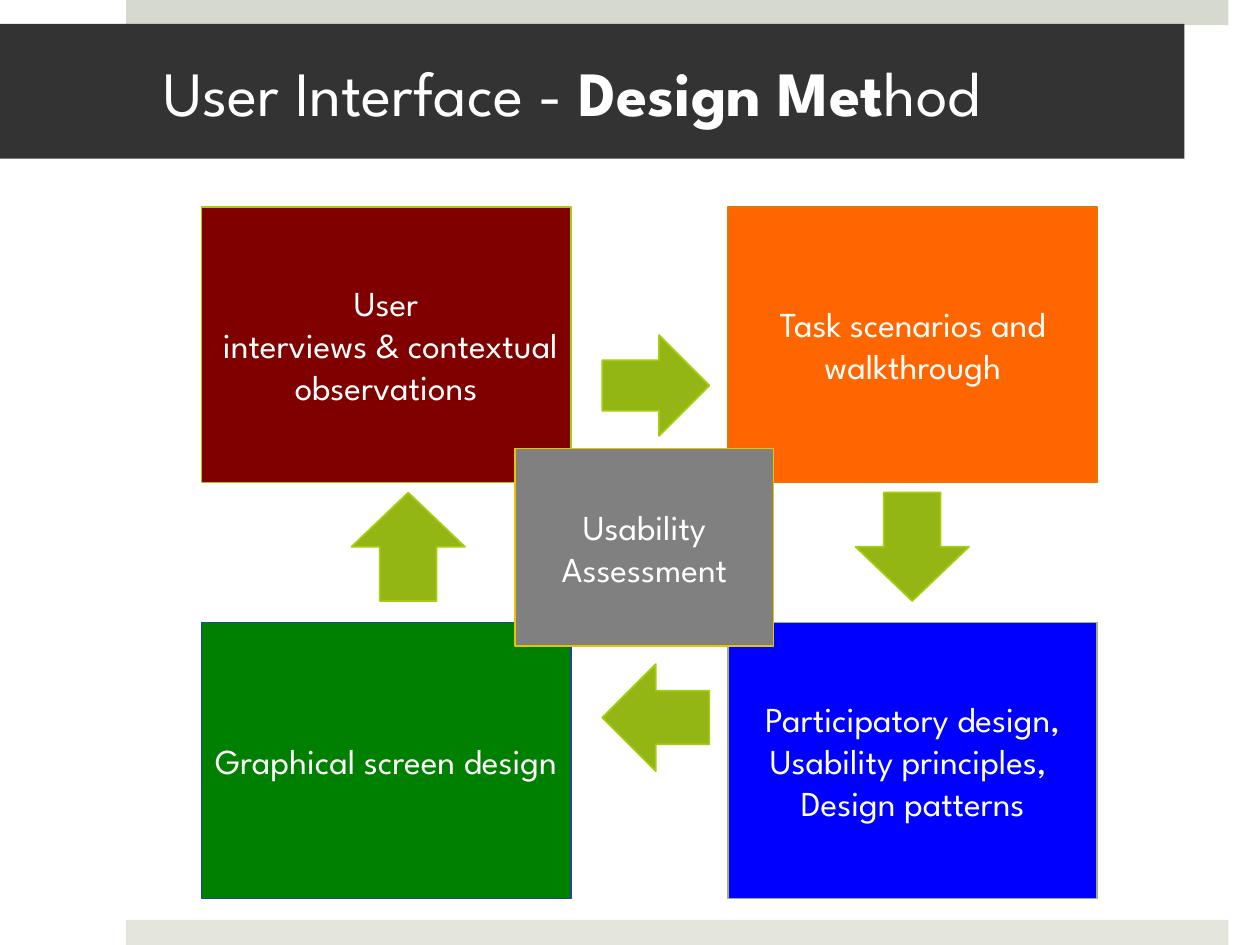
from dataclasses import dataclass

from pptx import Presentation
from pptx.dml.color import RGBColor
from pptx.enum.shapes import MSO_SHAPE
from pptx.enum.text import MSO_ANCHOR, MSO_AUTO_SIZE, PP_ALIGN
from pptx.util import Inches, Pt

FONT = "League Spartan"
WHITE = "FFFFFF"
ARROW_FILL, ARROW_LINE = "93B614", "A5CC12"
LEFT_COLUMN, RIGHT_COLUMN = 1.6, 5.78
TOP_ROW, BOTTOM_ROW = 1.64, 4.94
STEP_WIDTH, STEP_HEIGHT = 2.93, 2.19


@dataclass
class Box:
    left: float
    top: float
    fill: str
    line: str
    lines: tuple[str, ...]
    width: float = STEP_WIDTH
    height: float = STEP_HEIGHT


@dataclass
class Arrow:
    kind: MSO_SHAPE
    left: float
    top: float
    width: float
    height: float


BOXES_BEHIND = [
    Box(LEFT_COLUMN, TOP_ROW, "800000", "A5CC12",
        ("User", " interviews & contextual observations")),
    Box(RIGHT_COLUMN, TOP_ROW, "FF6600", "E27600", ("Task scenarios and walkthrough",)),
    Box(RIGHT_COLUMN, BOTTOM_ROW, "0000FF", "A3B36E",
        ("Participatory design, Usability principles, ", "Design patterns")),
]
ARROWS = [
    Arrow(MSO_SHAPE.RIGHT_ARROW, 4.78, 2.66, 0.85, 0.8),
    Arrow(MSO_SHAPE.DOWN_ARROW, 6.79, 3.91, 0.9, 0.86),
    Arrow(MSO_SHAPE.LEFT_ARROW, 4.78, 5.27, 0.85, 0.85),
    Arrow(MSO_SHAPE.UP_ARROW, 2.79, 3.91, 0.9, 0.86),
]
BOXES_IN_FRONT = [
    Box(LEFT_COLUMN, BOTTOM_ROW, "008000", "1E439E", ("Graphical screen design",)),
    Box(4.09, 3.56, "808080", "E6C500", ("Usability Assessment",), 2.05, 1.57),
]


def color(value: str) -> RGBColor:
    return RGBColor.from_string(value)


def paint(shape, fill: str) -> None:
    shape.fill.solid()
    shape.fill.fore_color.rgb = color(fill)


def add_run(paragraph, text: str, size: float, bold: bool = False) -> None:
    run = paragraph.add_run()
    run.text = text
    run.font.name = FONT
    run.font.size = Pt(size)
    run.font.bold = bold
    run.font.color.rgb = color(WHITE)


def add_shape(slide, kind: MSO_SHAPE, left: float, top: float, width: float,
              height: float, fill: str, line: str | None = None):
    """Add a flat shape, outlined at one point when a line colour is given."""
    shape = slide.shapes.add_shape(
        kind, Inches(left), Inches(top), Inches(width), Inches(height))
    shape.shadow.inherit = False
    paint(shape, fill)
    if line:
        shape.line.color.rgb = color(line)
        shape.line.width = Pt(1)
    else:
        shape.line.fill.background()
    return shape


def add_box(slide, box: Box) -> None:
    shape = add_shape(slide, MSO_SHAPE.RECTANGLE, box.left, box.top,
                      box.width, box.height, box.fill, box.line)
    frame = shape.text_frame
    frame.word_wrap = True
    frame.vertical_anchor = MSO_ANCHOR.MIDDLE
    paragraph = frame.paragraphs[0]
    paragraph.alignment = PP_ALIGN.CENTER
    for index, text in enumerate(box.lines):
        if index:
            paragraph.add_line_break()
        add_run(paragraph, text, 20)


def add_arrow(slide, arrow: Arrow) -> None:
    add_shape(slide, arrow.kind, arrow.left, arrow.top, arrow.width,
              arrow.height, ARROW_FILL, ARROW_LINE)


def format_title(title) -> None:
    title.left, title.top = Inches(0), Inches(0.19)
    title.width, title.height = Inches(9.4), Inches(1.07)
    paint(title, "333333")
    frame = title.text_frame
    frame.word_wrap = True
    frame.auto_size = MSO_AUTO_SIZE.NONE
    frame.vertical_anchor = MSO_ANCHOR.MIDDLE
    frame.margin_left, frame.margin_right = Inches(1.3), Inches(0.3)
    frame.margin_top = frame.margin_bottom = Inches(0.05)
    paragraph = frame.paragraphs[0]
    paragraph.alignment = PP_ALIGN.LEFT
    add_run(paragraph, "User Interface - ", 36)
    add_run(paragraph, "Design Met", 36, bold=True)
    add_run(paragraph, "hod", 36)


def main() -> None:
    presentation = Presentation()
    presentation.slide_width, presentation.slide_height = Inches(10), Inches(7.5)
    slide = presentation.slides.add_slide(presentation.slide_layouts[5])
    title = slide.shapes.title
    format_title(title)

    for top, fill in ((0, "D6D9CD"), (7.3, "E4E6DE")):
        band = add_shape(slide, MSO_SHAPE.RECTANGLE, 1, top, 8.75, 0.2, fill)
        title.element.addprevious(band.element)  # bands lie behind the title

    for box in BOXES_BEHIND:
        add_box(slide, box)
    for arrow in ARROWS:
        add_arrow(slide, arrow)
    for box in BOXES_IN_FRONT:
        add_box(slide, box)

    presentation.save("out.pptx")


if __name__ == "__main__":
    main()
